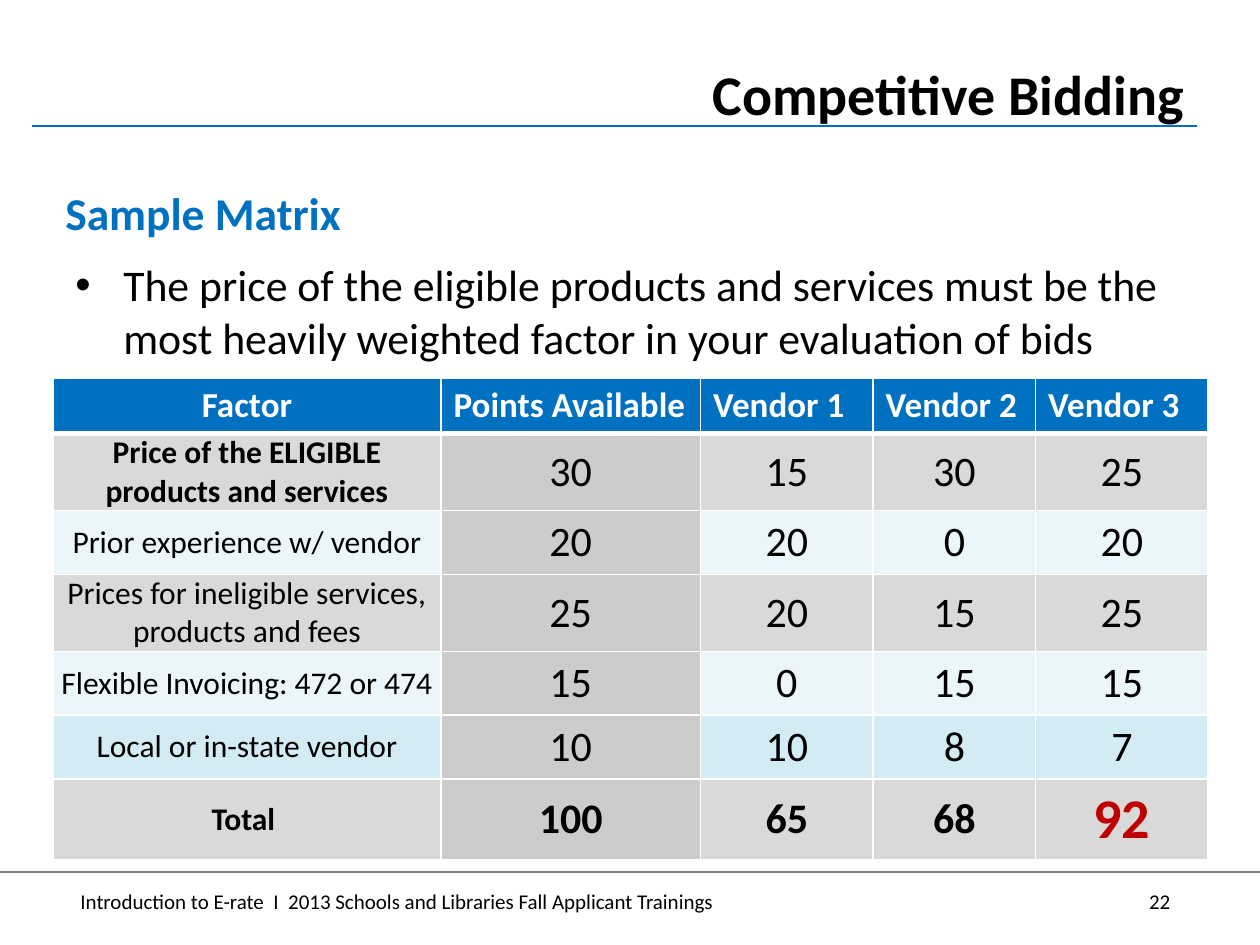
from dataclasses import dataclass

import pptx
import pptx.dml.color
import pptx.enum.shapes
import pptx.enum.text
import pptx.oxml.ns
import pptx.util
from lxml import etree

Inches = pptx.util.Inches
Pt = pptx.util.Pt
ALIGN = pptx.enum.text.PP_ALIGN
ANCHOR = pptx.enum.text.MSO_ANCHOR
qn = pptx.oxml.ns.qn


@dataclass(frozen=True)
class Theme:
    font: str = "Calibri"
    black: str = "000000"
    white: str = "FFFFFF"
    blue: str = "0070C0"
    red: str = "C00000"
    rule_gray: str = "808080"
    points_gray: str = "CCCCCC"
    row_gray: str = "D9D9D9"
    pale_blue: str = "EAF6FA"
    light_blue: str = "D3ECF4"
    title: int = 32
    heading: int = 26
    body: int = 25
    score: int = 24
    header: int = 20
    factor: int = 18
    footer: int = 12


THEME = Theme()

COLUMN_WIDTHS = (3.08, 2.06, 1.37, 1.29, 1.37)
ROW_HEIGHTS = (0.42, 0.61, 0.5, 0.61, 0.5, 0.5, 0.63)
HEADERS = ("Factor", "Points Available", "Vendor 1", "Vendor 2", "Vendor 3")
# Factor, scores, row fill
FACTORS = (
    ("Price of the ELIGIBLE products and services", (30, 15, 30, 25), THEME.row_gray),
    ("Prior experience w/ vendor", (20, 20, 0, 20), THEME.pale_blue),
    ("Prices for ineligible services, products and fees", (25, 20, 15, 25), THEME.row_gray),
    ("Flexible Invoicing: 472 or 474", (15, 0, 15, 15), THEME.pale_blue),
    ("Local or in-state vendor", (10, 10, 8, 7), THEME.light_blue),
    ("Total ", (100, 65, 68, 92), THEME.row_gray),
)


def rgb(value):
    return pptx.dml.color.RGBColor.from_string(value)


def add_run(paragraph, text, size, color=THEME.black, bold=False):
    run = paragraph.add_run()
    run.text = text
    run.font.name = THEME.font
    run.font.size = Pt(size)
    run.font.bold = bold
    run.font.color.rgb = rgb(color)


def prepare_frame(shape):
    frame = shape.text_frame
    frame.word_wrap = True
    frame.auto_size = pptx.enum.text.MSO_AUTO_SIZE.NONE
    frame.vertical_anchor = ANCHOR.TOP
    return frame.paragraphs[0]


def add_text_box(slide, box):
    return prepare_frame(slide.shapes.add_textbox(*map(Inches, box)))


def add_rule(slide, left, right, top, color, width):
    line = slide.shapes.add_connector(
        pptx.enum.shapes.MSO_CONNECTOR.STRAIGHT,
        Inches(left), Inches(top), Inches(right), Inches(top))
    line.line.color.rgb = rgb(color)
    line.line.width = Pt(width)
    etree.SubElement(line._element.spPr, qn("a:effectLst"))


def add_title(slide, box):
    title = slide.shapes.title
    title.left, title.top, title.width, title.height = map(Inches, box)
    paragraph = prepare_frame(title)
    paragraph.alignment = ALIGN.RIGHT
    add_run(paragraph, "Competitive Bidding", THEME.title, bold=True)
    add_rule(slide, 0.25, 9.5, box[1] + box[3], THEME.blue, 1.25)


def add_heading(slide, box):
    add_run(add_text_box(slide, box), "Sample Matrix", THEME.heading, THEME.blue, True)


def add_bullet(slide, box):
    paragraph = add_text_box(slide, box)
    properties = paragraph._p.get_or_add_pPr()
    properties.set("marL", str(Inches(0.38)))
    properties.set("indent", str(-Inches(0.38)))
    color = etree.SubElement(properties, qn("a:buClr"))
    etree.SubElement(color, qn("a:srgbClr"), val=THEME.black)
    etree.SubElement(properties, qn("a:buFont"), typeface="Arial")
    etree.SubElement(properties, qn("a:buChar"), char="•")
    paragraph.space_after = Pt(6)
    add_run(paragraph, "The price of the eligible products and services must be the "
            "most heavily weighted factor in your evaluation of bids", THEME.body)


def set_borders(cell, bottom):
    properties = cell._tc.get_or_add_tcPr()
    widths = {"a:lnL": 1, "a:lnR": 1, "a:lnT": 1, "a:lnB": bottom}
    for position, (tag, width) in enumerate(widths.items()):
        line = etree.Element(qn(tag), w=str(Pt(width)))
        fill = etree.SubElement(line, qn("a:solidFill"))
        etree.SubElement(fill, qn("a:srgbClr"), val=THEME.white)
        properties.insert(position, line)


def fill_cell(cell, text, fill, size, color, bold, centered=True, bottom=1):
    cell.fill.solid()
    cell.fill.fore_color.rgb = rgb(fill)
    set_borders(cell, bottom)
    paragraph = cell.text_frame.paragraphs[0]
    paragraph.alignment = ALIGN.CENTER if centered else ALIGN.LEFT
    add_run(paragraph, text, size, color, bold)


def add_matrix(slide, box):
    table = slide.shapes.add_table(
        len(ROW_HEIGHTS), len(COLUMN_WIDTHS), *map(Inches, box)).table
    table.horz_banding = False
    for column, width in zip(table.columns, COLUMN_WIDTHS):
        column.width = Inches(width)
    for row, height in zip(table.rows, ROW_HEIGHTS):
        row.height = Inches(height)

    # Header row
    for index, text in enumerate(HEADERS):
        fill_cell(table.cell(0, index), text, THEME.blue, THEME.header,
                  THEME.white, True, centered=index == 0, bottom=3)

    # Factor rows, with the total and the winning score stressed
    for row, (factor, scores, row_fill) in enumerate(FACTORS, start=1):
        is_total = row == len(FACTORS)
        for column, value in enumerate((factor, *scores)):
            cell = table.cell(row, column)
            is_winner = is_total and value == max(scores[1:])
            size = THEME.factor if column == 0 else THEME.score
            fill_cell(cell, str(value),
                      THEME.points_gray if column == 1 else row_fill,
                      THEME.title if is_winner else size,
                      THEME.red if is_winner else THEME.black,
                      is_total or (row == 1 and column == 0))
            cell.vertical_anchor = ANCHOR.MIDDLE
            if column < 2:
                cell.margin_left = cell.margin_right = 0
                cell.margin_top = cell.margin_bottom = 0


def add_footer(slide, box):
    add_rule(slide, 0, 10, 6.92, THEME.rule_gray, 0.75)
    paragraph = add_text_box(slide, box)
    tabs = etree.SubElement(paragraph._p.get_or_add_pPr(), qn("a:tabLst"))
    etree.SubElement(tabs, qn("a:tab"), pos=str(Inches(8.65)), algn="r")
    add_run(paragraph, "Introduction to E-rate  I  2013 Schools and Libraries "
            "Fall Applicant Trainings\t22", THEME.footer)


def main():
    presentation = pptx.Presentation()
    presentation.slide_width = Inches(10)
    presentation.slide_height = Inches(7.5)
    slide = presentation.slides.add_slide(presentation.slide_layouts[5])
    slide.background.fill.solid()
    slide.background.fill.fore_color.rgb = rgb(THEME.white)

    add_footer(slide, (0.54, 7, 8.96, 0.34))
    add_title(slide, (2.75, 0.42, 6.75, 0.58))
    add_matrix(slide, (0.42, 3, 9.17, 3.77))
    add_bullet(slide, (0.5, 2, 9.25, 0.92))
    add_heading(slide, (0.42, 1.42, 9.08, 0.58))
    presentation.save("out.pptx")


if __name__ == "__main__":
    main()
